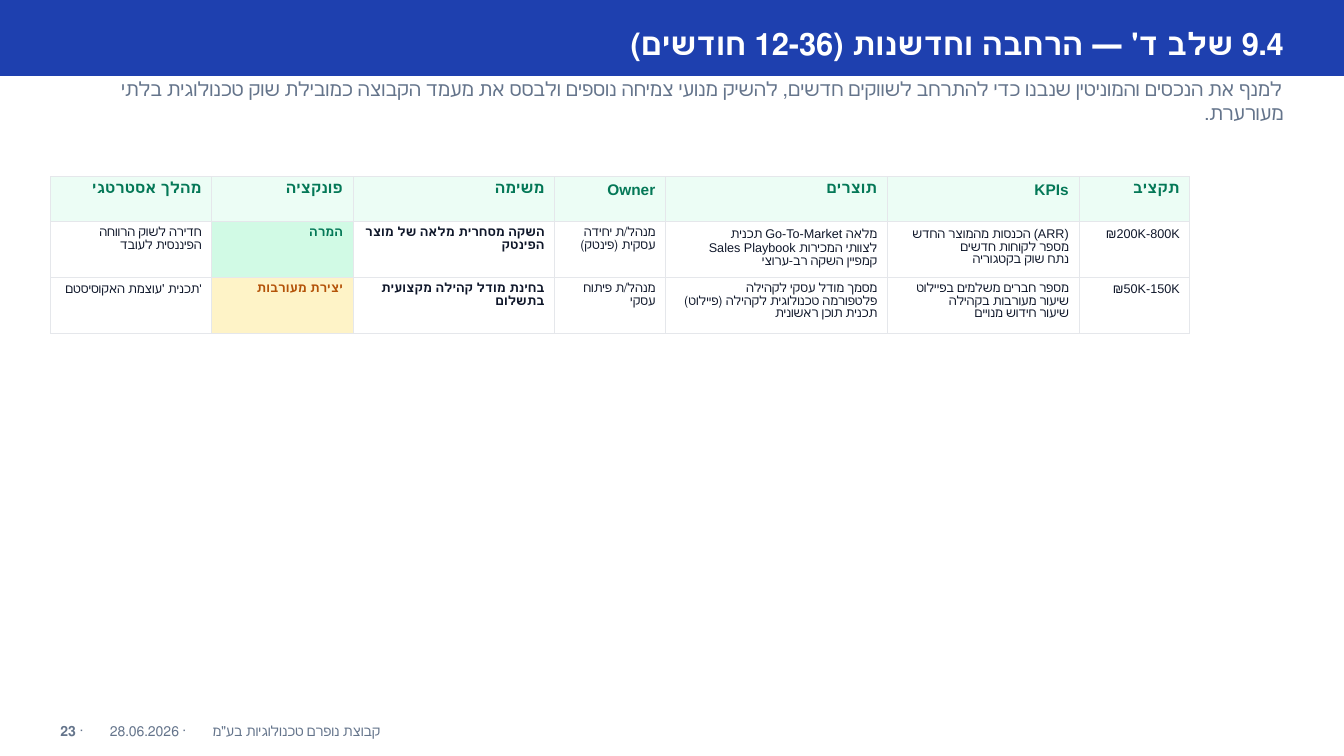
"""Build the stage four roadmap slide: title band, summary, task table and footer."""
from dataclasses import dataclass
from typing import Any

from lxml import etree
from pptx import Presentation
from pptx import util as u
from pptx.dml import color
from pptx.enum import shapes, text
from pptx.oxml import ns

PX = 9144


@dataclass(frozen=True)
class Theme:
    font: str = "Arial"
    band: str = "1E40AF"
    white: str = "FFFFFF"
    muted: str = "64748B"
    ink: str = "0F172A"
    border: str = "E5E7EB"
    green: str = "047857"
    header_fill: str = "ECFDF5"
    green_fill: str = "D1FAE5"
    amber: str = "B45309"
    amber_fill: str = "FEF3C7"
    title_size: int = 22
    summary_size: int = 14
    header_size: int = 11
    footer_size: int = 10
    body_size: int = 9


THEME = Theme()


@dataclass(frozen=True)
class Style:
    size: int
    ink: str
    bold: bool = False


@dataclass(frozen=True)
class Column:
    heading: str
    width: int
    bold: bool = False


@dataclass(frozen=True)
class Task:
    cells: tuple[str, ...]
    accent: str
    accent_fill: str


COLUMNS = (
    Column("מהלך אסטרטגי", 160),
    Column("פונקציה", 140, True),
    Column("משימה", 200, True),
    Column("Owner", 110),
    Column("תוצרים", 220),
    Column("KPIs", 190),
    Column("תקציב", 110),
)
FUNCTION_COLUMN = 1
ROW_HEIGHT = 45

TASKS = (
    Task(
        (
            "חדירה לשוק הרווחה הפיננסית לעובד",
            "המרה",
            "השקה מסחרית מלאה של מוצר הפינטק",
            "מנהל/ת יחידה עסקית (פינטק)",
            "תכנית Go-To-Market מלאה\nSales Playbook לצוותי המכירות\nקמפיין השקה רב-ערוצי",
            "הכנסות מהמוצר החדש (ARR)\nמספר לקוחות חדשים\nנתח שוק בקטגוריה",
            "₪200K-800K",
        ),
        THEME.green,
        THEME.green_fill,
    ),
    Task(
        (
            "תכנית 'עוצמת האקוסיסטם'",
            "יצירת מעורבות",
            "בחינת מודל קהילה מקצועית בתשלום",
            "מנהל/ת פיתוח עסקי",
            "מסמך מודל עסקי לקהילה\nפלטפורמה טכנולוגית לקהילה (פיילוט)\nתכנית תוכן ראשונית",
            "מספר חברים משלמים בפיילוט\nשיעור מעורבות בקהילה\nשיעור חידוש מנויים",
            "₪50K-150K",
        ),
        THEME.amber,
        THEME.amber_fill,
    ),
)


def px(length: int) -> u.Emu:
    """Convert px to EMU."""
    return u.Emu(length * PX)


def rgb(value: str) -> color.RGBColor:
    """Convert a hex string to a colour."""
    return color.RGBColor.from_string(value)


def style_para(para: Any, style: Style) -> None:
    """Apply a text style to a whole paragraph."""
    para.font.name = THEME.font
    para.font.size = u.Pt(style.size)
    para.font.bold = style.bold
    para.font.color.rgb = rgb(style.ink)


def add_box(page: Any, top: int, height: int) -> Any:
    """Add a full-width text box and return its first paragraph."""
    frame = page.shapes.add_textbox(px(50), px(top), px(1233), px(height)).text_frame
    frame.word_wrap = True
    frame.vertical_anchor = text.MSO_ANCHOR.MIDDLE
    return frame.paragraphs[0]


def add_hebrew_line(page: Any, wording: str, top: int, height: int, style: Style) -> None:
    """Add a right-to-left line of text."""
    para = add_box(page, top, height)
    para.text = wording
    para.alignment = text.PP_ALIGN.RIGHT
    para._p.get_or_add_pPr().set("rtl", "1")
    style_para(para, style)


def add_band(page: Any) -> None:
    """Draw the band behind the title."""
    band = page.shapes.add_shape(shapes.MSO_SHAPE.RECTANGLE, 0, 0, px(1333), px(75))
    band.shadow.inherit = False
    band.fill.solid()
    band.fill.fore_color.rgb = rgb(THEME.band)
    band.line.color.rgb = rgb(THEME.band)
    band.line.width = u.Pt(1)


def fill_cell(cell: Any, wording: str, style: Style, fill: str) -> None:
    """Write, border and fill one table cell."""
    cell.text = wording
    for para in cell.text_frame.paragraphs:
        para.alignment = text.PP_ALIGN.RIGHT
        style_para(para, style)
    properties = cell._tc.get_or_add_tcPr()
    for side in ("a:lnL", "a:lnR", "a:lnT", "a:lnB"):
        line = etree.SubElement(properties, ns.qn(side), w=str(u.Pt(0.5)))
        paint = etree.SubElement(line, ns.qn("a:solidFill"))
        etree.SubElement(paint, ns.qn("a:srgbClr"), val=THEME.border)
    cell.fill.solid()
    cell.fill.fore_color.rgb = rgb(fill)


def add_task_table(page: Any) -> None:
    """Add the table of tasks."""
    count = len(TASKS) + 1
    frame = page.shapes.add_table(
        count, len(COLUMNS), px(50), px(175), px(1233), px(count * ROW_HEIGHT)
    )
    table = frame.table
    table.first_row = table.horz_banding = False
    for row in table.rows:
        row.height = px(ROW_HEIGHT)
    heading_style = Style(THEME.header_size, THEME.green, True)
    for index, column in enumerate(COLUMNS):
        table.columns[index].width = px(column.width)
        fill_cell(table.cell(0, index), column.heading, heading_style, THEME.header_fill)
        for number, task in enumerate(TASKS, 1):
            accented = index == FUNCTION_COLUMN
            ink = task.accent if accented else THEME.ink
            fill = task.accent_fill if accented else THEME.white
            style = Style(THEME.body_size, ink, column.bold)
            fill_cell(table.cell(number, index), task.cells[index], style, fill)


def add_footer(page: Any, company: str, date: str, number: str) -> None:
    """Add the footer with widely spaced dots and a bold page number."""
    para = add_box(page, 710, 30)
    style_para(para, Style(THEME.footer_size, THEME.muted))
    for wording in (company, " ·", f" {date}", " ·", f" {number}"):
        span = para.add_run()
        span.text = wording
        if wording == " ·":
            span._r.get_or_add_rPr().set("spc", "830")
    span.font.bold = True


def main() -> None:
    """Build and save the deck."""
    deck = Presentation()
    deck.slide_width, deck.slide_height = px(1333), px(750)
    page = deck.slides.add_slide(deck.slide_layouts[6])
    add_band(page)
    add_hebrew_line(page, "9.4 שלב ד' — הרחבה וחדשנות (12-36 חודשים)", 10, 65,
                    Style(THEME.title_size, THEME.white, True))
    add_hebrew_line(page, "למנף את הנכסים והמוניטין שנבנו כדי להתרחב לשווקים חדשים, להשיק מנועי צמיחה "
                    "נוספים ולבסס את מעמד הקבוצה כמובילת שוק טכנולוגית בלתי מעורערת.", 80, 40,
                    Style(THEME.summary_size, THEME.muted))
    add_task_table(page)
    add_footer(page, 'קבוצת נופרם טכנולוגיות בע"מ', "28.06.2026", "23")
    deck.save("out.pptx")


if __name__ == "__main__":
    main()
